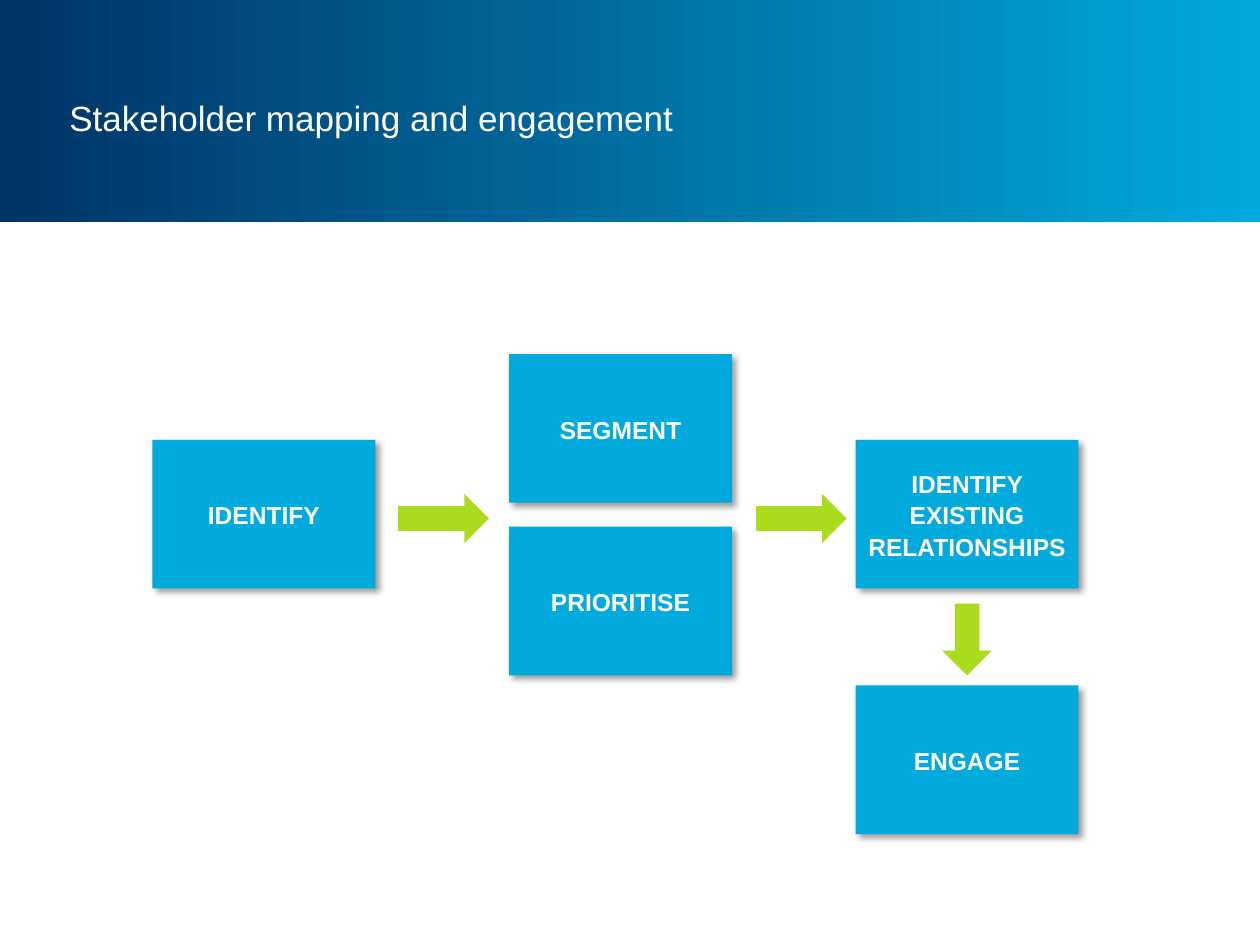
from dataclasses import dataclass

from lxml import etree
from pptx import Presentation
from pptx.dml.color import RGBColor
from pptx.enum.shapes import MSO_SHAPE
from pptx.enum.text import MSO_ANCHOR, PP_ALIGN
from pptx.oxml import parse_xml
from pptx.oxml.ns import nsdecls, qn
from pptx.util import Inches, Pt


@dataclass(frozen=True)
class Theme:
    navy: RGBColor = RGBColor(0x00, 0x33, 0x66)
    blue: RGBColor = RGBColor(0x00, 0xAA, 0xDC)
    green: RGBColor = RGBColor(0xAA, 0xDC, 0x1E)
    white: RGBColor = RGBColor(0xFF, 0xFF, 0xFF)
    font: str = "Arial"
    title_size: Pt = Pt(20)
    box_size: Pt = Pt(14)


theme = Theme()

presentation = Presentation()
presentation.slide_width = Inches(10)
presentation.slide_height = Inches(7.5)
slide = presentation.slides.add_slide(presentation.slide_layouts[6])


def add_plain_shape(kind, left, top, width, height, color):
    shape = slide.shapes.add_shape(
        kind, Inches(left), Inches(top), Inches(width), Inches(height))
    shape.shadow.inherit = False
    shape.fill.solid()
    shape.fill.fore_color.rgb = color
    shape.line.fill.background()
    return shape


def add_text(paragraph, text, size, bold=False):
    run = paragraph.add_run()
    run.text = text
    run.font.name = theme.font
    run.font.size = size
    run.font.bold = bold
    run.font.color.rgb = theme.white


# Header band with a left-to-right gradient
band = add_plain_shape(MSO_SHAPE.RECTANGLE, 0, 0, 10, 1.76, theme.blue)
band.fill.gradient()
band.fill.gradient_angle = 0
for stop, color, position in zip(
        band.fill.gradient_stops, (theme.navy, theme.blue), (0, 1)):
    stop.color.rgb = color
    stop.position = position

# Title
title = slide.shapes.add_textbox(Inches(0.51), Inches(0.3), Inches(7.48), Inches(1.26))
frame = title.text_frame
frame.word_wrap = True
frame.vertical_anchor = MSO_ANCHOR.MIDDLE
frame.margin_left = frame.margin_right = Inches(0.04)
frame.margin_top = frame.margin_bottom = Inches(0.04)
add_text(frame.paragraphs[0], "Stakeholder mapping and engagement", theme.title_size)

# Process boxes, each with a soft shadow to the lower right
first, second, third = 1.21, 4.04, 6.79
middle_row = 3.49
boxes = [
    ("IDENTIFY", first, middle_row),
    ("SEGMENT", second, 2.81),
    ("PRIORITISE", second, 4.18),
    ("IDENTIFY EXISTING RELATIONSHIPS", third, middle_row),
    ("ENGAGE", third, 5.44),
]
for label, left, top in boxes:
    box = add_plain_shape(MSO_SHAPE.RECTANGLE, left, top, 1.77, 1.18, theme.blue)
    effects = box._element.spPr.find(qn("a:effectLst"))
    effects.append(parse_xml(
        f'<a:outerShdw {nsdecls("a")} blurRad="{Pt(4)}" dist="{Pt(3)}" '
        'dir="2700000" algn="tl" rotWithShape="0">'
        '<a:srgbClr val="000000"><a:alpha val="40000"/></a:srgbClr></a:outerShdw>'))
    frame = box.text_frame
    frame.word_wrap = True
    frame.vertical_anchor = MSO_ANCHOR.MIDDLE
    frame.margin_left = frame.margin_right = Inches(0.05)
    paragraph = frame.paragraphs[0]
    paragraph.alignment = PP_ALIGN.CENTER
    paragraph.line_spacing = 1.07
    paragraph.space_after = Pt(8)
    add_text(paragraph, label, theme.box_size, bold=True)

# Arrows between the steps
arrows = [(3.16, 3.92, 0.72, 0), (6, 3.92, 0.72, 0), (7.39, 4.88, 0.57, 90)]
for left, top, length, rotation in arrows:
    arrow = add_plain_shape(
        MSO_SHAPE.RIGHT_ARROW, left, top, length, 0.39, theme.green)
    arrow.rotation = rotation

presentation.save("out.pptx")
